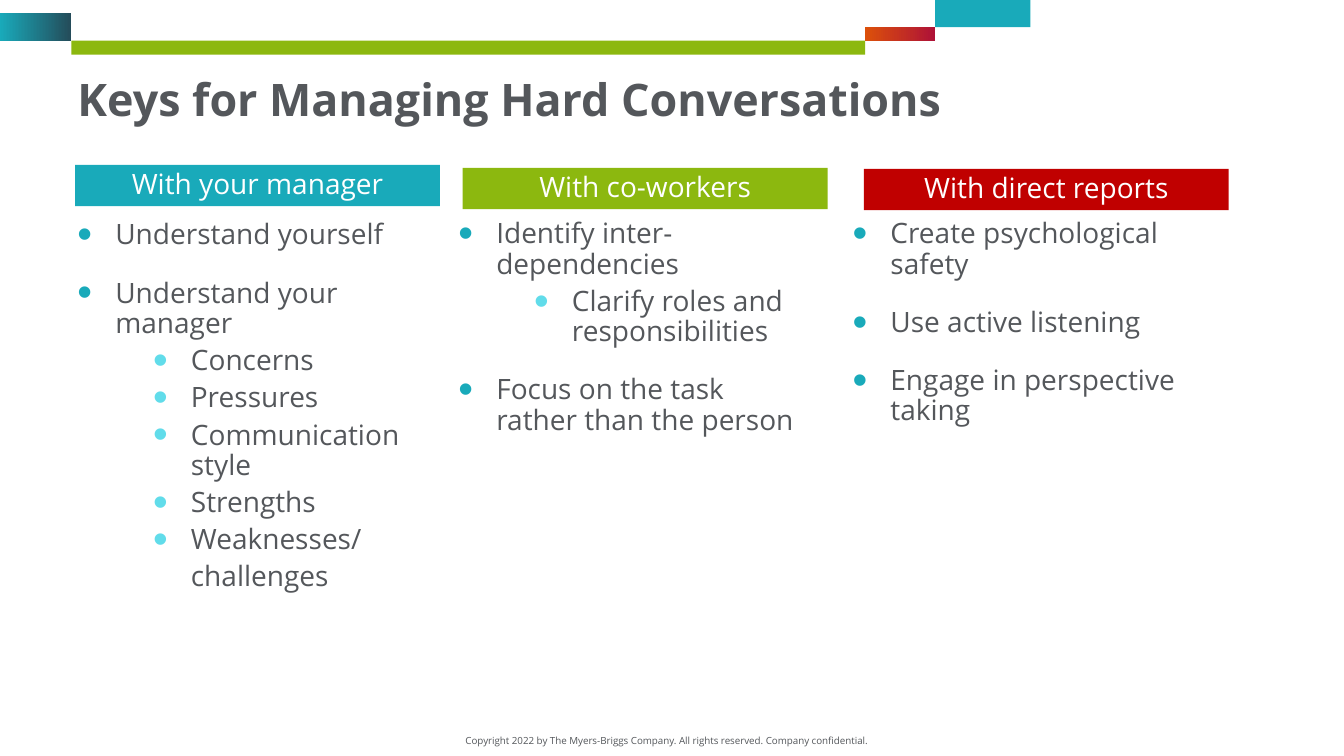
from lxml import etree
from pptx import Presentation
from pptx.dml.color import RGBColor
from pptx.enum.shapes import MSO_SHAPE
from pptx.enum.text import MSO_ANCHOR, PP_ALIGN
from pptx.oxml.ns import qn
from pptx.util import Pt

RECT = MSO_SHAPE.RECTANGLE
TOP, MIDDLE = MSO_ANCHOR.TOP, MSO_ANCHOR.MIDDLE
LEFT, CENTER = PP_ALIGN.LEFT, PP_ALIGN.CENTER

TEAL = RGBColor(0x19, 0xAA, 0xBA)
DEEP_TEAL = RGBColor(0x24, 0x4C, 0x5A)
AQUA = RGBColor(0x61, 0xDC, 0xEA)
GREEN = RGBColor(0x8C, 0xB8, 0x0F)
ORANGE = RGBColor(0xDC, 0x50, 0x0A)
CRIMSON = RGBColor(0xAE, 0x12, 0x37)
RED = RGBColor(0xC0, 0x00, 0x00)
GREY = RGBColor(0x54, 0x57, 0x5B)
WHITE = RGBColor(0xFF, 0xFF, 0xFF)

COLUMN_WIDTH = 260.64
INDENTS = [27, 81]
SPACE_BEFORE = [20, 5]
BULLET_COLORS = [TEAL, AQUA]


def add_rect(left, top, width, height, colors):
    sp = s.shapes.add_shape(RECT, Pt(left), Pt(top), Pt(width), Pt(height))
    sp.shadow.inherit = False
    sp.line.fill.background()
    if len(colors) == 1:
        sp.fill.solid()
        sp.fill.fore_color.rgb = colors[0]
    else:
        sp.fill.gradient()
        sp.fill.gradient_angle = 0
        for stop, color in zip(sp.fill.gradient_stops, colors):
            stop.color.rgb = color
    return sp


def write(p, text, size, color, align=LEFT, bold=False, spacing=0.9):
    p.alignment = align
    p.line_spacing = spacing
    r = p.add_run()
    r.text = text
    r.font.color.rgb = color
    for name, value in {"name": "Open Sans", "size": Pt(size), "bold": bold}.items():
        setattr(r.font, name, value)


prs = Presentation()
prs.slide_width, prs.slide_height = Pt(960), Pt(540)
s = prs.slides.add_slide(prs.slide_layouts[6])

for bar in [
    (51, 29, 567, 10, [GREEN]),
    (0, 9.4, 51, 20, [TEAL, DEEP_TEAL]),
    (668, 0, 68, 19.4, [TEAL]),
    (618, 19.4, 50, 10, [ORANGE, CRIMSON]),
]:
    add_rect(*bar)

for left, top, width, height, text, size, align, bold, spacing in [
    (48.24, 51.84, 830, 68.4, "Keys for Managing Hard Conversations", 32, LEFT, True, 0.9),
    (321, 521.3, 310.3, 15.8, "Copyright 2022 by The Myers-Briggs Company. "
     "All rights reserved. Company confidential.", 7, CENTER, False, 1.0),
]:
    tf = s.shapes.add_textbox(Pt(left), Pt(top), Pt(width), Pt(height)).text_frame
    tf.word_wrap = True
    write(tf.paragraphs[0], text, size, GREY, align, bold, spacing)

columns = [
    ("With your manager", TEAL, 53.64, 117.72, 48.24, 154.08, 318.24, [
        (0, "Understand yourself"),
        (0, "Understand your manager"),
        (1, "Concerns"),
        (1, "Pressures"),
        (1, "Communication style"),
        (1, "Strengths"),
        (1, "Weaknesses/"),
        (1, "challenges"),
    ]),
    ("With co-workers", GREEN, 330.48, 119.88, 320.4, 153.36, 218.88, [
        (0, "Identify inter- dependencies"),
        (1, "Clarify roles and responsibilities"),
        (0, "Focus on the task rather than the person"),
    ]),
    ("With direct reports", RED, 617.04, 120.6, 601.92, 153.36, 218.88, [
        (0, "Create psychological safety"),
        (0, "Use active listening"),
        (0, "Engage in perspective taking"),
    ]),
]

for heading, color, head_left, head_top, left, top, height, items in columns:
    tf = add_rect(head_left, head_top, COLUMN_WIDTH, 29.5, [color]).text_frame
    tf.vertical_anchor = MIDDLE
    write(tf.paragraphs[0], heading, 20, WHITE, CENTER)

    tf = s.shapes.add_textbox(Pt(left), Pt(top), Pt(COLUMN_WIDTH), Pt(height)).text_frame
    tf.word_wrap = True
    tf.vertical_anchor = TOP
    for i, (level, text) in enumerate(items):
        p = tf.add_paragraph() if i else tf.paragraphs[0]
        p.level = level
        pPr = p._p.get_or_add_pPr()
        pPr.set("marL", str(Pt(INDENTS[level])))
        if text == "challenges":
            pPr.set("indent", "0")
            etree.SubElement(pPr, qn("a:buNone"))
        else:
            pPr.set("indent", str(-Pt(27)))
            bullet_color = etree.SubElement(pPr, qn("a:buClr"))
            etree.SubElement(bullet_color, qn("a:srgbClr"), val=str(BULLET_COLORS[level]))
            etree.SubElement(pPr, qn("a:buSzPct"), val="150000")
            etree.SubElement(pPr, qn("a:buFont"), typeface="Arial")
            etree.SubElement(pPr, qn("a:buChar"), char="•")
        if i:
            p.space_before = Pt(SPACE_BEFORE[level])
        write(p, text, 20, GREY)

prs.save("out.pptx")
